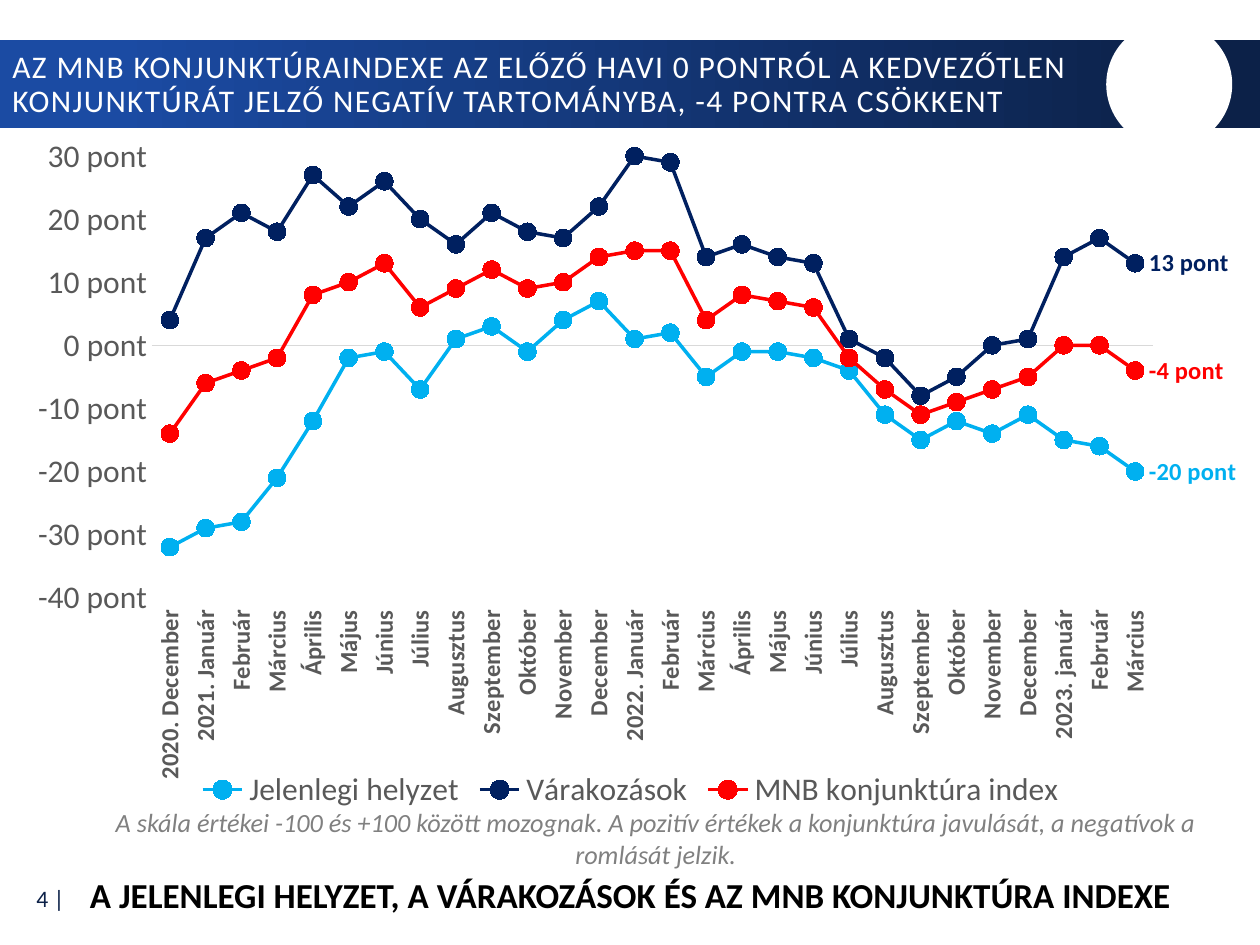
from lxml import etree
from pptx import Presentation
from pptx.chart.data import CategoryChartData
from pptx.dml.color import RGBColor
from pptx.enum.chart import (XL_CHART_TYPE, XL_LABEL_POSITION, XL_LEGEND_POSITION,
                             XL_MARKER_STYLE, XL_TICK_LABEL_POSITION, XL_TICK_MARK)
from pptx.enum.shapes import MSO_SHAPE
from pptx.enum.text import MSO_ANCHOR, PP_ALIGN
from pptx.oxml.ns import qn
from pptx.util import Inches, Pt

LINE = XL_CHART_TYPE.LINE_MARKERS
DOT = XL_MARKER_STYLE.CIRCLE
NONE = XL_TICK_MARK.NONE
LOW = XL_TICK_LABEL_POSITION.LOW
BOTTOM = XL_LEGEND_POSITION.BOTTOM
BESIDE = XL_LABEL_POSITION.RIGHT
RECT, OVAL = MSO_SHAPE.RECTANGLE, MSO_SHAPE.OVAL
TOP, MIDDLE = MSO_ANCHOR.TOP, MSO_ANCHOR.MIDDLE
LEFT, CENTER, RIGHT = PP_ALIGN.LEFT, PP_ALIGN.CENTER, PP_ALIGN.RIGHT

FONT = "Calibri"
UNIT = 'General\\ "pont"'
COLORS = {"blue": "1B4BA3", "navy": "0C2148", "white": "FFFFFF", "black": "000000",
          "note": "808080", "label": "595959", "axis": "D9D9D9",
          "now": "00B0F0", "hope": "002060", "index": "FF0000"}

MONTHS = ["Január", "Február", "Március", "Április", "Május", "Június", "Július",
          "Augusztus", "Szeptember", "Október", "November", "December"]
CATS = (["2020. December", "2021. Január"] + MONTHS[1:]
        + ["2022. Január"] + MONTHS[1:] + ["2023. január"] + MONTHS[1:3])
SERIES = [
    ("Jelenlegi helyzet", "now",
     [-32, -29, -28, -21, -12, -2, -1, -7, 1, 3, -1, 4, 7, 1, 2, -5, -1, -1, -2, -4,
      -11, -15, -12, -14, -11, -15, -16, -20]),
    ("Várakozások", "hope",
     [4, 17, 21, 18, 27, 22, 26, 20, 16, 21, 18, 17, 22, 30, 29, 14, 16, 14, 13, 1,
      -2, -8, -5, 0, 1, 14, 17, 13]),
    ("MNB konjunktúra index", "index",
     [-14, -6, -4, -2, 8, 10, 13, 6, 9, 12, 9, 10, 14, 15, 15, 4, 8, 7, 6, -2,
      -7, -11, -9, -7, -5, 0, 0, -4]),
]


def rgb(name):
    return RGBColor.from_string(COLORS[name])


def style(font, size, color, bold=False, italic=False):
    font.name, font.size = FONT, Pt(size)
    font.bold, font.italic = bold, italic
    font.color.rgb = rgb(color)


def add_text(slide, box, text, size, color, align=CENTER, anchor=TOP,
             bold=False, italic=False):
    frame = slide.shapes.add_textbox(*map(Inches, box)).text_frame
    frame.word_wrap = True
    frame.vertical_anchor = anchor
    frame.text = text
    par = frame.paragraphs[0]
    par.alignment = align
    style(par.runs[0].font, size, color, bold, italic)
    return par


def add_plain(slide, kind, box):
    shape = slide.shapes.add_shape(kind, *map(Inches, box))
    shape.shadow.inherit = False
    shape.line.fill.background()
    return shape


def add_header(slide, box, title):
    x, y, w, h = box
    # Gradient band
    fill = add_plain(slide, RECT, box).fill
    fill.gradient()
    fill.gradient_angle = 0
    for stop, color, pos in zip(fill.gradient_stops, ("blue", "navy"), (0.09, 0.95)):
        stop.color.rgb = rgb(color)
        stop.position = pos
    # White disc near the right end
    disc = add_plain(slide, OVAL, (x + w - 1.22, y - 0.15, 1, 1))
    disc.fill.solid()
    disc.fill.fore_color.rgb = rgb("white")
    # Title
    par = add_text(slide, (x, y + 0.02, w - 1.19, h - 0.03), title, 18, "white",
                   LEFT, MIDDLE)
    par.line_spacing = 0.9
    par.runs[0].font._element.set("spc", "80")


def set_plot(chart, **place):
    area = chart._chartSpace.find(".//" + qn("c:plotArea"))
    for old in area.findall(qn("c:layout")):
        area.remove(old)
    layout = etree.Element(qn("c:layout"))
    manual = etree.SubElement(layout, qn("c:manualLayout"))
    modes = {"layoutTarget": "inner", "xMode": "edge", "yMode": "edge"}
    for tag, val in {**modes, **place}.items():
        etree.SubElement(manual, qn("c:" + tag)).set("val", str(val))
    area.insert(0, layout)


def style_line(line, color):
    line.smooth = False
    line.format.line.color.rgb = rgb(color)
    line.format.line.width = Pt(2)
    mark = line.marker
    mark.style, mark.size = DOT, 10
    mark.format.fill.solid()
    mark.format.fill.fore_color.rgb = rgb(color)
    mark.format.line.color.rgb = rgb(color)
    # Label on the last point only
    line.data_labels.show_value = False
    label = line.points[len(CATS) - 1].data_label
    style(label.font, 14, color, bold=True)
    label.position = BESIDE
    item = line._element.find(".//" + qn("c:dLbl"))
    fmt = etree.Element(qn("c:numFmt"), formatCode=UNIT, sourceLinked="0")
    item.insert(1, fmt)


def add_lines(slide, box):
    data = CategoryChartData()
    data.categories = CATS
    for name, _, vals in SERIES:
        data.add_series(name, vals)
    chart = slide.shapes.add_chart(LINE, *map(Inches, box), data).chart
    chart.has_title = False
    style(chart.font, 18, "black")
    chart.plots[0].vary_by_categories = False
    set_plot(chart, x=0.119, y=0.042, w=0.797, h=0.642)
    for line, (_, color, _) in zip(chart.plots[0].series, SERIES):
        style_line(line, color)

    # Month axis
    cat = chart.category_axis
    cat.major_tick_mark = cat.minor_tick_mark = NONE
    cat.tick_label_position = LOW
    style(cat.tick_labels.font, 14, "label", bold=True)
    cat._element.find(qn("c:txPr")).find(qn("a:bodyPr")).set("rot", "-5400000")
    cat.format.line.color.rgb = rgb("axis")
    cat.format.line.width = Pt(0.75)

    # Point axis
    val = chart.value_axis
    val.minimum_scale, val.maximum_scale, val.major_unit = -40, 30, 10
    val.has_major_gridlines = False
    val.major_tick_mark = val.minor_tick_mark = NONE
    val.format.line.fill.background()
    val.tick_labels.number_format = UNIT
    val.tick_labels.number_format_is_linked = False
    style(val.tick_labels.font, 18, "label")

    # Legend
    chart.has_legend = True
    chart.legend.position = BOTTOM
    chart.legend.include_in_layout = False
    style(chart.legend.font, 18, "label")


def add_footer(slide, box):
    x, y, w, h = box
    add_text(slide, (x + 0.62, y, w - 0.84, 0.61),
             "A skála értékei -100 és +100 között mozognak. A pozitív értékek a "
             "konjunktúra javulását, a negatívok a romlását jelzik.",
             15, "note", italic=True)
    add_text(slide, (x, y + 0.53, w, 0.44),
             "A JELENLEGI HELYZET, A VÁRAKOZÁSOK ÉS AZ MNB KONJUNKTÚRA INDEXE",
             20, "black", bold=True)
    add_text(slide, (x - 0.01, y + h - 0.38, 0.6, 0.37), "4 |", 13.5, "navy",
             RIGHT, MIDDLE)


def main():
    deck = Presentation()
    deck.slide_width, deck.slide_height = Inches(10), Inches(7.5)
    slide = deck.slides.add_slide(deck.slide_layouts[6])
    add_header(slide, (0, 0.32, 10, 0.7),
               "AZ MNB KONJUNKTÚRAINDEXE AZ ELŐZŐ HAVI 0 PONTRÓL A KEDVEZŐTLEN "
               "KONJUNKTÚRÁT JELZŐ NEGATÍV TARTOMÁNYBA, -4 PONTRA CSÖKKENT")
    add_lines(slide, (0.02, 1.01, 9.97, 5.46))
    add_footer(slide, (0.02, 6.35, 9.97, 0.97))
    deck.save("out.pptx")


if __name__ == "__main__":
    main()
